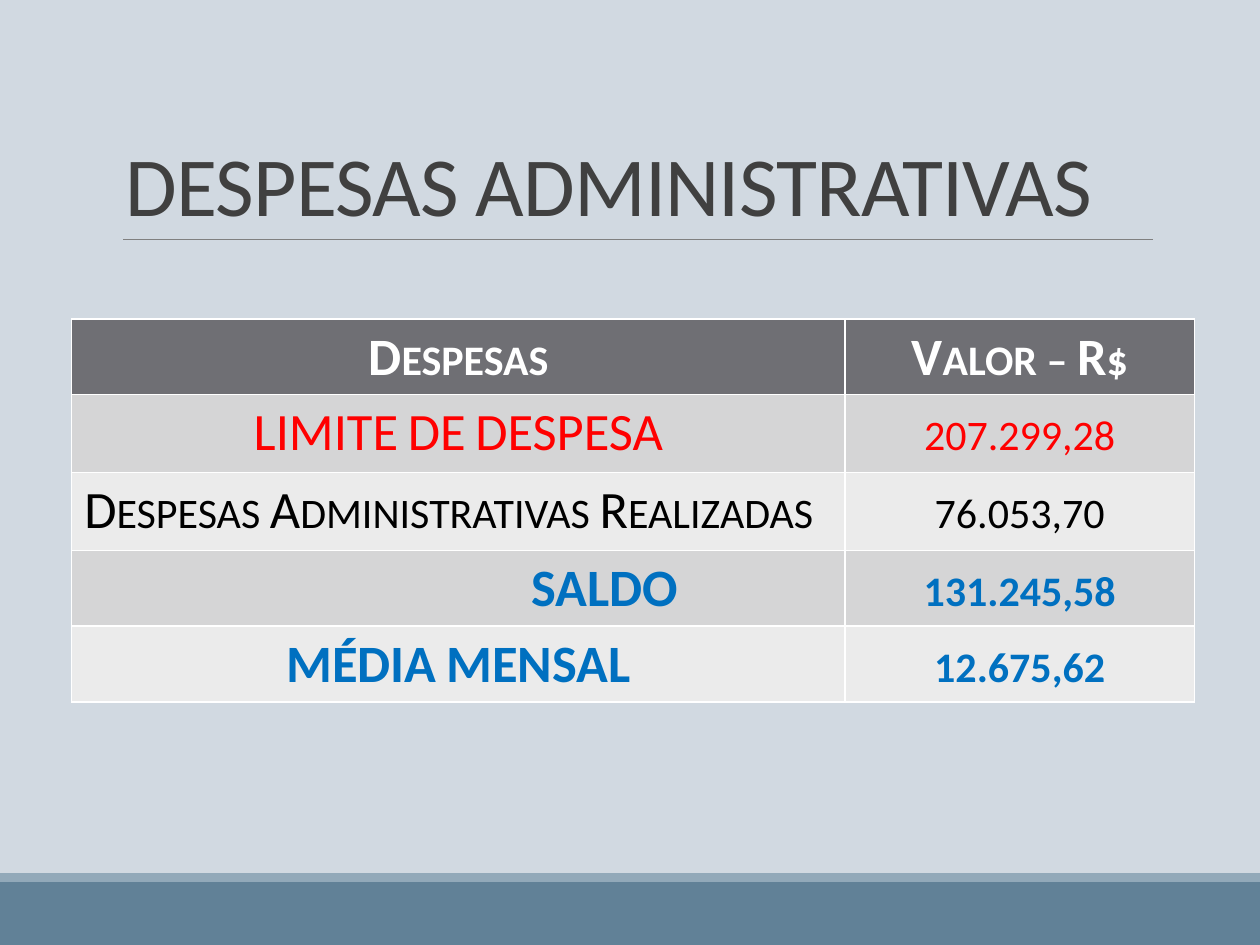
from dataclasses import dataclass

from pptx import Presentation
from pptx.dml.color import RGBColor
from pptx.enum.shapes import MSO_CONNECTOR, MSO_SHAPE
from pptx.enum.text import MSO_ANCHOR, PP_ALIGN
from pptx.oxml.ns import qn
from pptx.util import Pt

FONT = "Calibri"
PAGE_WIDTH, PAGE_HEIGHT = 720, 540
COLUMN_WIDTHS = (442, 199.5)
HEADER_FILL = "6F6F74"
BAND_FILLS = ("D5D5D6", "EBEBEB")


@dataclass
class Band:
    top: float
    height: float
    fill: str


@dataclass
class ExpenseRow:
    label: str
    value: str
    color: str
    bold: bool = False
    height: float = 43.2
    align: PP_ALIGN = PP_ALIGN.CENTER
    indent: float = 0


BANDS = (Band(504, 36, "618197"), Band(499, 5, "92A9B9"))
ROWS = (
    ExpenseRow("Despesas", "Valor – R$", "FFFFFF", bold=True),
    ExpenseRow("LIMITE DE DESPESA", "207.299,28", "FF0000", height=44.6),
    ExpenseRow("Despesas Administrativas Realizadas", "76.053,70", "000000",
               height=44.6, align=PP_ALIGN.JUSTIFY),
    ExpenseRow("SALDO", "131.245,58", "0070C0", bold=True, indent=83.5),
    ExpenseRow("MÉDIA MENSAL", "12.675,62", "0070C0", bold=True),
)


def rgb(value: str) -> RGBColor:
    return RGBColor.from_string(value)


def write(frame, text: str, *, size: float, color: str, bold: bool = False,
          align: PP_ALIGN = PP_ALIGN.LEFT, line_spacing: float = 1.0,
          indent: float = 0, tracking: float = 0, small_caps: bool = False) -> None:
    para = frame.paragraphs[0]
    para.alignment = align
    para.line_spacing = line_spacing
    if indent:
        para._p.get_or_add_pPr().set("marL", str(Pt(indent)))
    span = para.add_run()
    span.text = text
    span.font.name = FONT
    span.font.size = Pt(size)
    span.font.bold = bold
    span.font.color.rgb = rgb(color)
    properties = span._r.get_or_add_rPr()
    if tracking:
        properties.set("spc", str(round(tracking * 100)))
    if small_caps:
        properties.set("cap", "small")


def draw_band(page, band: Band) -> None:
    box = page.shapes.add_shape(MSO_SHAPE.RECTANGLE, 0, Pt(band.top),
                                Pt(PAGE_WIDTH), Pt(band.height))
    box.shadow.inherit = False
    box.fill.solid()
    box.fill.fore_color.rgb = rgb(band.fill)
    box.line.fill.background()


def draw_title(page, text: str) -> None:
    rule = page.shapes.add_connector(MSO_CONNECTOR.STRAIGHT, Pt(70.5), Pt(136.8),
                                     Pt(658.8), Pt(136.8))
    rule.line.color.rgb = rgb("808080")
    rule.line.width = Pt(0.5)
    properties = rule._element.spPr
    properties.append(properties.makeelement(qn("a:effectLst"), {}))
    box = page.shapes.add_textbox(Pt(64.8), Pt(22.3), Pt(594), Pt(114.5))
    box.text_frame.word_wrap = True
    box.text_frame.vertical_anchor = MSO_ANCHOR.BOTTOM
    write(box.text_frame, text, size=48, color="404040", line_spacing=0.85, tracking=-0.5)


def draw_table(page, rows: tuple[ExpenseRow, ...]) -> None:
    """Fill the cells and leave the white borders to the default table style."""
    table = page.shapes.add_table(len(rows), len(COLUMN_WIDTHS), Pt(41), Pt(182.2),
                                  Pt(sum(COLUMN_WIDTHS)),
                                  Pt(sum(row.height for row in rows))).table
    for column, width in zip(table.columns, COLUMN_WIDTHS):
        column.width = Pt(width)
    for index, row in enumerate(rows):
        table.rows[index].height = Pt(row.height)
        fill = BAND_FILLS[(index - 1) % 2] if index else HEADER_FILL
        contents = ((row.label, row.align, row.indent),
                    (row.value, PP_ALIGN.CENTER, 0))
        for cell, (text, align, indent) in zip(table.rows[index].cells, contents):
            cell.fill.solid()
            cell.fill.fore_color.rgb = rgb(fill)
            write(cell.text_frame, text, size=30, color=row.color, bold=row.bold,
                  align=align, indent=indent, small_caps=True)


def main() -> None:
    deck = Presentation()
    deck.slide_width, deck.slide_height = Pt(PAGE_WIDTH), Pt(PAGE_HEIGHT)
    page = deck.slides.add_slide(deck.slide_layouts[6])
    page.background.fill.solid()
    page.background.fill.fore_color.rgb = rgb("D1D9E1")
    for band in BANDS:
        draw_band(page, band)
    draw_title(page, "DESPESAS ADMINISTRATIVAS")
    draw_table(page, ROWS)
    deck.save("out.pptx")


if __name__ == "__main__":
    main()
